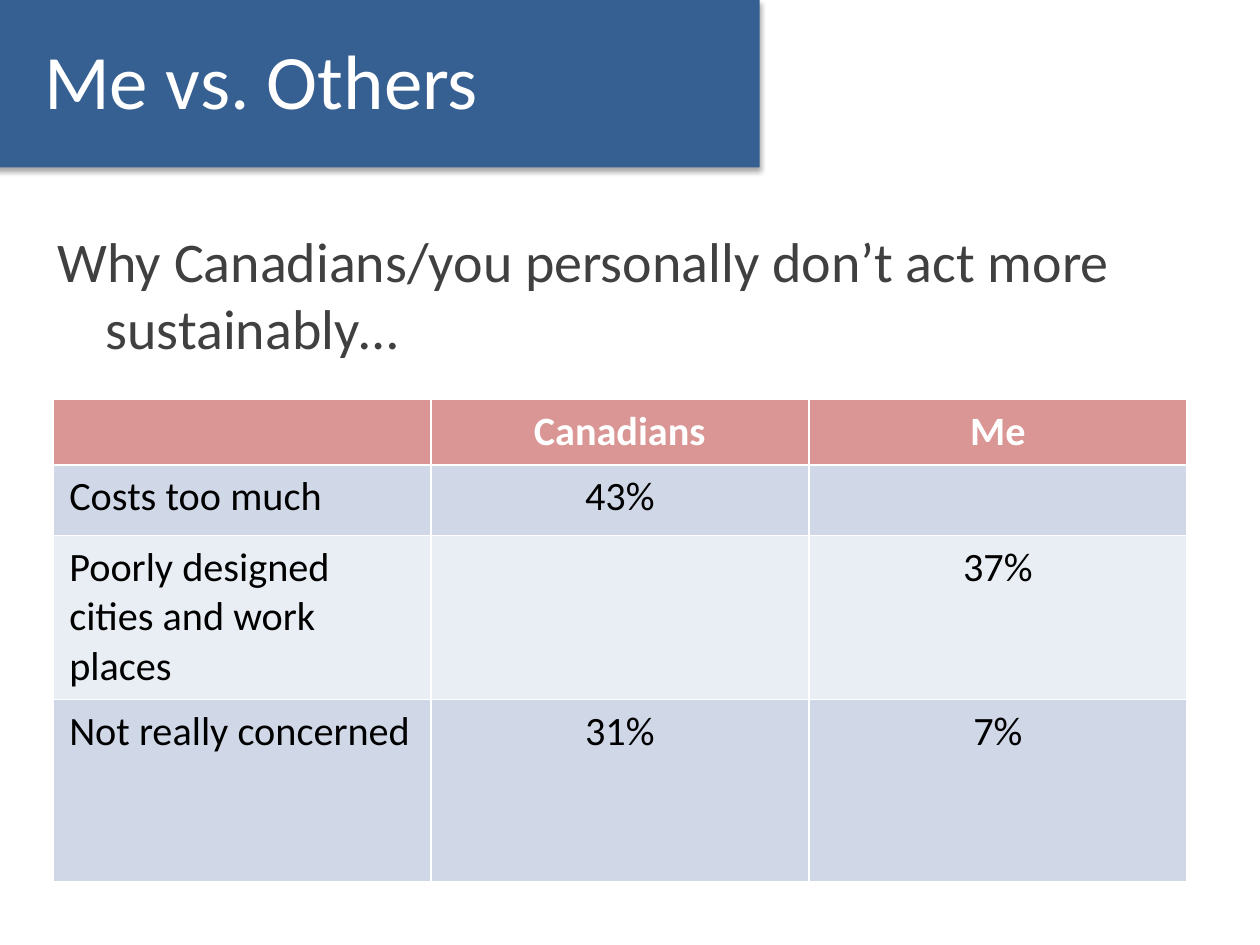
from lxml import etree
from pptx import Presentation
from pptx.dml.color import RGBColor
from pptx.enum import shapes, text
from pptx.oxml import ns
from pptx.util import Inches, Pt

COLORS = {
    "banner": "376092",
    "header": "D99694",
    "odd_row": "D0D8E8",
    "even_row": "E9EDF4",
    "white": "FFFFFF",
    "body": "404040",
    "black": "000000",
}
FORMATS = {
    "title": {"size": Pt(44), "bold": False, "color": "white"},
    "question": {"size": Pt(32), "bold": False, "color": "body"},
    "header": {"size": Pt(23), "bold": True, "color": "white"},
    "cell": {"size": Pt(23), "bold": False, "color": "black"},
}
REASONS = [
    ("", "Canadians", "Me"),
    ("Costs too much", "43%", ""),
    ("Poorly designed cities and work places", "", "37%"),
    ("Not really concerned", "31%", "7%"),
]
ROW_HEIGHTS = [0.52, 0.56, 1.3, 1.45]
COLUMN_WIDTH = 3
CELL_MARGINS = {
    "margin_left": Inches(0.13),
    "margin_right": Inches(0.13),
    "margin_top": Inches(0.06),
    "margin_bottom": Inches(0.06),
}


def rgb(name):
    return RGBColor.from_string(COLORS[name])


def box(left, top, width, height):
    return [Inches(value) for value in (left, top, width, height)]


def write(paragraph, wording, style, align=text.PP_ALIGN.LEFT):
    paragraph.alignment = align
    run = paragraph.add_run()
    run.text = wording
    run.font.name = "Calibri"
    for key, value in FORMATS[style].items():
        if key == "color":
            run.font.color.rgb = rgb(value)
        else:
            setattr(run.font, key, value)


def add_question(slide):
    question = slide.shapes.add_textbox(*box(0.36, 1.75, 9.25, 5.5))
    question.text_frame.word_wrap = True
    paragraph = question.text_frame.paragraphs[0]
    write(paragraph, "Why Canadians/you personally don’t act more sustainably…", "question")
    indent = paragraph._p.get_or_add_pPr()
    indent.set("marL", str(Inches(0.38)))
    indent.set("indent", str(Inches(-0.38)))


def add_reasons(slide):
    columns = len(REASONS[0])
    area = box(0.42, 3.17, COLUMN_WIDTH * columns, sum(ROW_HEIGHTS))
    table = slide.shapes.add_table(len(REASONS), columns, *area).table
    for column in table.columns:
        column.width = Inches(COLUMN_WIDTH)
    for i, (reason, height) in enumerate(zip(REASONS, ROW_HEIGHTS)):
        table.rows[i].height = Inches(height)
        fill = "header" if i == 0 else "odd_row" if i % 2 else "even_row"
        for j, wording in enumerate(reason):
            cell = table.cell(i, j)
            cell.fill.solid()
            cell.fill.fore_color.rgb = rgb(fill)
            for key, value in CELL_MARGINS.items():
                setattr(cell, key, value)
            if wording:
                align = text.PP_ALIGN.CENTER if j else text.PP_ALIGN.LEFT
                style = "cell" if i else "header"
                write(cell.text_frame.paragraphs[0], wording, style, align)


def add_shadow(shape):
    shape.shadow.inherit = False
    effects = shape._element.spPr.find(ns.qn("a:effectLst"))
    shadow = etree.SubElement(
        effects, ns.qn("a:outerShdw"), blurRad=str(Pt(3.1)),
        dist=str(Pt(1.8)), dir="5400000", rotWithShape="0",
    )
    color = etree.SubElement(shadow, ns.qn("a:srgbClr"), val=COLORS["black"])
    etree.SubElement(color, ns.qn("a:alpha"), val="35000")


def add_banner(slide):
    banner = slide.shapes.add_shape(
        shapes.MSO_SHAPE.RECTANGLE, *box(-0.43, 0, 6.46, 1.33))
    banner.fill.solid()
    banner.fill.fore_color.rgb = rgb("banner")
    banner.line.fill.background()
    add_shadow(banner)


def place_title(slide):
    title = slide.shapes.title
    title.left, title.top, title.width, title.height = box(0.25, 0, 5.75, 1.25)
    title.text_frame.vertical_anchor = text.MSO_ANCHOR.MIDDLE
    write(title.text_frame.paragraphs[0], "Me vs. Others", "title")
    slide.shapes._spTree.append(title._element)


def main():
    deck = Presentation()
    deck.slide_width, deck.slide_height = Inches(10), Inches(7.5)
    slide = deck.slides.add_slide(deck.slide_layouts[5])
    add_question(slide)
    add_reasons(slide)
    add_banner(slide)
    place_title(slide)
    deck.save("out.pptx")


if __name__ == "__main__":
    main()
